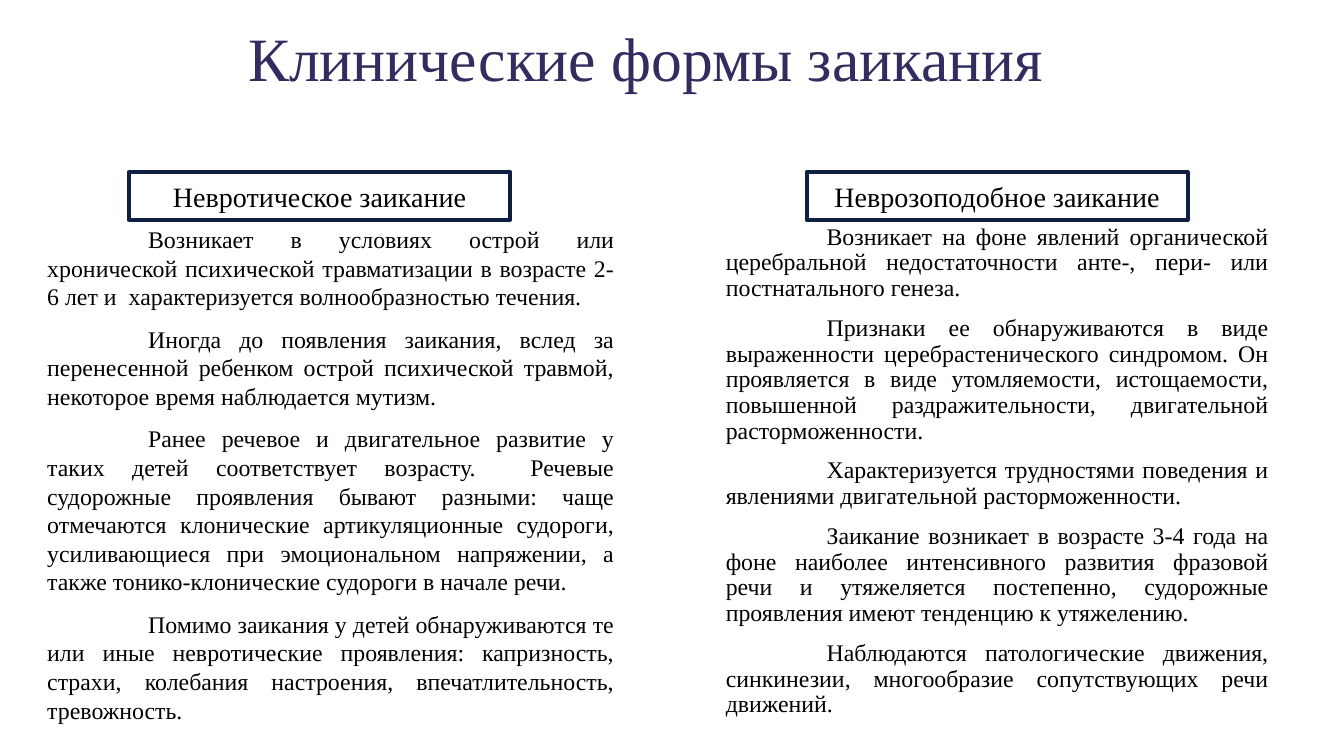
from dataclasses import dataclass

import pptx
import pptx.dml.color
import pptx.enum.shapes
import pptx.enum.text
import pptx.util

Inches = pptx.util.Inches
Pt = pptx.util.Pt
RGBColor = pptx.dml.color.RGBColor
Align = pptx.enum.text.PP_ALIGN
Anchor = pptx.enum.text.MSO_ANCHOR

FONT = "Times New Roman"
VIOLET = RGBColor(0x31, 0x2D, 0x5F)
NAVY = RGBColor(0x0F, 0x1F, 0x40)
BLACK = RGBColor(0, 0, 0)
WHITE = RGBColor(0xFF, 0xFF, 0xFF)


@dataclass
class Form:
    name: str
    head: float
    left: float
    width: float
    height: float
    pitch: float
    notes: list[str]


FORMS = [
    Form("Невротическое заикание", 1.28, 0.37, 5.82, 6.38, 1.0, [
        "Возникает в условиях острой или хронической психической травматизации "
        "в возрасте 2-6 лет и  характеризуется волнообразностью течения.",
        "Иногда до появления заикания, вслед за перенесенной ребенком острой "
        "психической травмой, некоторое время наблюдается мутизм.",
        "Ранее речевое и двигательное развитие у таких детей соответствует "
        "возрасту.  Речевые судорожные проявления бывают разными: чаще "
        "отмечаются клонические артикуляционные судороги, усиливающиеся при "
        "эмоциональном напряжении, а также тонико-клонические судороги "
        "в начале речи.",
        "Помимо заикания у детей обнаруживаются те или иные невротические "
        "проявления: капризность, страхи, колебания настроения, "
        "впечатлительность, тревожность.",
    ]),
    Form("Неврозоподобное заикание", 8, 7.1, 5.58, 6.22, 0.9, [
        "Возникает на фоне явлений органической церебральной недостаточности "
        "анте-, пери- или постнатального генеза.",
        "Признаки ее обнаруживаются в виде выраженности церебрастенического "
        "синдромом. Он проявляется в виде утомляемости, истощаемости, "
        "повышенной раздражительности, двигательной расторможенности.",
        "Характеризуется трудностями поведения и явлениями двигательной "
        "расторможенности.",
        "Заикание возникает в возрасте 3-4 года на фоне наиболее интенсивного "
        "развития фразовой речи и утяжеляется постепенно, судорожные "
        "проявления имеют тенденцию к утяжелению.",
        "Наблюдаются патологические движения, синкинезии, многообразие "
        "сопутствующих речи движений.",
    ]),
]


def style(para, size: float, color: RGBColor, align: Align) -> None:
    para.alignment = align
    para.font.name = FONT
    para.font.size = Pt(size)
    para.font.color.rgb = color


def add_title(slide, text: str) -> None:
    box = slide.shapes.add_textbox(Inches(1.91), Inches(0.38), Inches(9), Inches(0.46))
    frame = box.text_frame
    frame.word_wrap = True
    frame.vertical_anchor = Anchor.MIDDLE
    para = frame.paragraphs[0]
    para.text = text
    para.line_spacing = 0.9
    style(para, 44, VIOLET, Align.CENTER)


def add_notes(slide, form: Form) -> None:
    box = slide.shapes.add_textbox(
        Inches(form.left), Inches(2.18), Inches(form.width), Inches(form.height))
    frame = box.text_frame
    frame.word_wrap = True
    for i, note in enumerate(form.notes):
        para = frame.add_paragraph() if i else frame.paragraphs[0]
        para.text = note
        para.line_spacing = form.pitch
        para.space_before = Pt(10 if i else 0)
        para._p.get_or_add_pPr().set("indent", str(Inches(1)))
        style(para, 17, BLACK, Align.JUSTIFY)


def add_head(slide, form: Form) -> None:
    box = slide.shapes.add_shape(
        pptx.enum.shapes.MSO_SHAPE.RECTANGLE,
        Inches(form.head), Inches(1.71), Inches(3.78), Inches(0.47))
    box.shadow.inherit = False
    box.fill.solid()
    box.fill.fore_color.rgb = WHITE
    box.line.color.rgb = NAVY
    box.line.width = Pt(3)
    frame = box.text_frame
    frame.word_wrap = False
    frame.vertical_anchor = Anchor.MIDDLE
    para = frame.paragraphs[0]
    para.text = form.name
    style(para, 20, BLACK, Align.CENTER)


def main() -> None:
    deck = pptx.Presentation()
    deck.slide_width = Inches(13.33)
    deck.slide_height = Inches(7.5)
    slide = deck.slides.add_slide(deck.slide_layouts[6])
    add_title(slide, "Клинические формы заикания")
    for form in FORMS:
        add_notes(slide, form)
        add_head(slide, form)
    deck.save("out.pptx")


if __name__ == "__main__":
    main()
